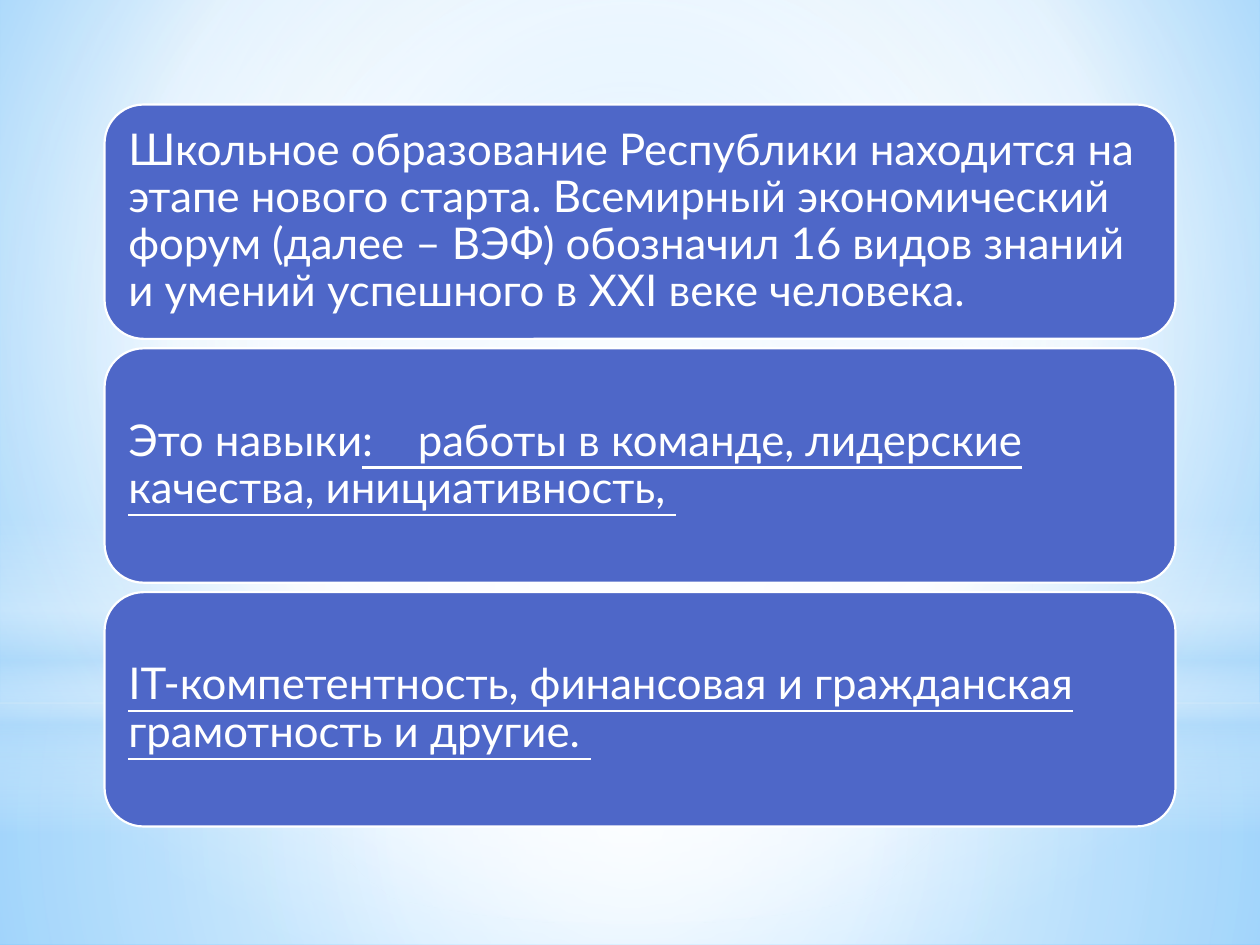
"""Build a slide of three rounded cards about school skills on a soft blue sky."""
from dataclasses import dataclass
from typing import Any, NamedTuple, Optional

from lxml import etree
from pptx import Presentation
from pptx import util as u
from pptx.dml.color import RGBColor
from pptx.enum import shapes, text
from pptx.oxml.ns import nsdecls, qn


@dataclass(frozen=True)
class Theme:
    white: str = "FFFFFF"
    mist: str = "B4DCFA"
    sky: str = "9ED5FF"
    deep_sky: str = "5BB9FF"
    card: str = "4E67C8"
    font: str = "Lato"
    text_size: float = 25
    border_width: float = 1.25


THEME = Theme()


class Box(NamedTuple):
    left: float
    top: float
    width: float
    height: float

    def lengths(self) -> list[u.Length]:
        return [u.Inches(value) for value in self]


class Stop(NamedTuple):
    position: int
    color: str
    opacity: int = 100


class Gradient(NamedTuple):
    stops: list[Stop]
    focus: Optional[tuple[int, int, int, int]] = (50, 50, 50, 50)
    angle: int = 90


class Layer(NamedTuple):
    box: Box
    gradient: Gradient
    preset: shapes.MSO_SHAPE = shapes.MSO_SHAPE.RECTANGLE


class Phrase(NamedTuple):
    words: str
    underline: bool = False


BACKGROUND = Gradient(
    [Stop(0, THEME.sky), Stop(60, THEME.white), Stop(100, THEME.deep_sky)], (20, 10, 20, 60))
LAYERS = [
    Layer(Box(0, 5.58, 10, 1.92), Gradient(
        [Stop(0, THEME.white, 91), Stop(37, THEME.white, 76), Stop(100, THEME.mist, 79)])),
    Layer(Box(0, 0, 10, 5.58), Gradient(
        [Stop(0, THEME.white, 89), Stop(48, THEME.white, 62), Stop(100, THEME.mist, 79)])),
    Layer(Box(0, 4.12, 10, 2.5), Gradient(
        [Stop(0, THEME.white, 0), Stop(29, THEME.white, 30), Stop(45, THEME.mist, 40),
         Stop(55, THEME.white, 26), Stop(65, THEME.mist, 60), Stop(100, THEME.white, 0)], None)),
    Layer(Box(0, 1.75, 10, 5.58), Gradient(
        [Stop(0, THEME.white), Stop(56, THEME.white, 0)]), shapes.MSO_SHAPE.OVAL),
]
FIRST_CARD = Box(0.83, 0.83, 8.5, 1.86)
CARD_PITCH = 1.935
TEXT_INSET = 0.09
CARDS = [
    [Phrase("Школьное образование Республики находится на этапе нового старта. "
            "Всемирный экономический форум (далее – ВЭФ) обозначил 16 видов знаний "
            "и умений успешного в XXI веке человека.")],
    [Phrase("Это навыки"),
     Phrase(":    работы в команде, лидерские качества, инициативность, ", True)],
    [Phrase("IT-компетентность, финансовая и гражданская грамотность и другие. ", True)],
]


def set_values(target: Any, values: dict[str, Any]) -> None:
    """Set each named attribute of the target."""
    for name, value in values.items():
        setattr(target, name, value)


def apply_gradient(fill: Any, element: Any, gradient: Gradient) -> None:
    """Give the fill its gradient stops and direction."""
    fill.gradient()
    stops = "".join(
        f'<a:gs pos="{stop.position * 1000}"><a:srgbClr val="{stop.color}">'
        f'<a:alpha val="{stop.opacity * 1000}"/></a:srgbClr></a:gs>' for stop in gradient.stops)
    if gradient.focus:
        sides = " ".join(f'{side}="{value * 1000}"' for side, value in zip("ltrb", gradient.focus))
        direction = f'<a:path path="circle"><a:fillToRect {sides}/></a:path>'
    else:
        direction = f'<a:lin ang="{gradient.angle * 60000}" scaled="0"/>'
    default = element.find(".//" + qn("a:gradFill"))
    default.getparent().replace(default, etree.fromstring(
        f'<a:gradFill {nsdecls("a")} rotWithShape="1"><a:gsLst>{stops}</a:gsLst>'
        f'{direction}</a:gradFill>'))


def draw_layer(slide: Any, layer: Layer) -> None:
    """Draw one translucent layer of the sky."""
    shape = slide.shapes.add_shape(layer.preset, *layer.box.lengths())
    shape.shadow.inherit = False
    shape.line.fill.background()
    apply_gradient(shape.fill, shape.element, layer.gradient)


def draw_card(group: Any, box: Box, phrases: list[Phrase]) -> None:
    """Draw a rounded card and its text."""
    card = group.shapes.add_shape(shapes.MSO_SHAPE.ROUNDED_RECTANGLE, *box.lengths())
    card.shadow.inherit = False
    card.fill.solid()
    card.fill.fore_color.rgb = RGBColor.from_string(THEME.card)
    card.line.color.rgb = RGBColor.from_string(THEME.white)
    card.line.width = u.Pt(THEME.border_width)

    inner = Box(box.left + TEXT_INSET, box.top + TEXT_INSET,
                box.width - 2 * TEXT_INSET, box.height - 2 * TEXT_INSET)
    frame = group.shapes.add_textbox(*inner.lengths()).text_frame
    margins = {f"margin_{side}": u.Inches(0.1) for side in ("left", "top", "right", "bottom")}
    set_values(frame, {"word_wrap": True, "vertical_anchor": text.MSO_ANCHOR.MIDDLE, **margins})
    paragraph = frame.paragraphs[0]
    paragraph.line_spacing = 0.9
    for phrase in phrases:
        run = paragraph.add_run()
        run.text = phrase.words
        set_values(run.font, {"name": THEME.font, "size": u.Pt(THEME.text_size),
                              "underline": phrase.underline})
        run.font.color.rgb = RGBColor.from_string(THEME.white)


def main() -> None:
    """Build and save the presentation."""
    presentation = Presentation()
    set_values(presentation, {"slide_width": u.Inches(10), "slide_height": u.Inches(7.5)})
    slide = presentation.slides.add_slide(presentation.slide_layouts[6])
    apply_gradient(slide.background.fill, slide.element, BACKGROUND)
    for layer in LAYERS:
        draw_layer(slide, layer)
    group = slide.shapes.add_group_shape()
    for index, phrases in enumerate(CARDS):
        box = FIRST_CARD._replace(top=FIRST_CARD.top + index * CARD_PITCH)
        draw_card(group, box, phrases)
    presentation.save("out.pptx")


if __name__ == "__main__":
    main()
